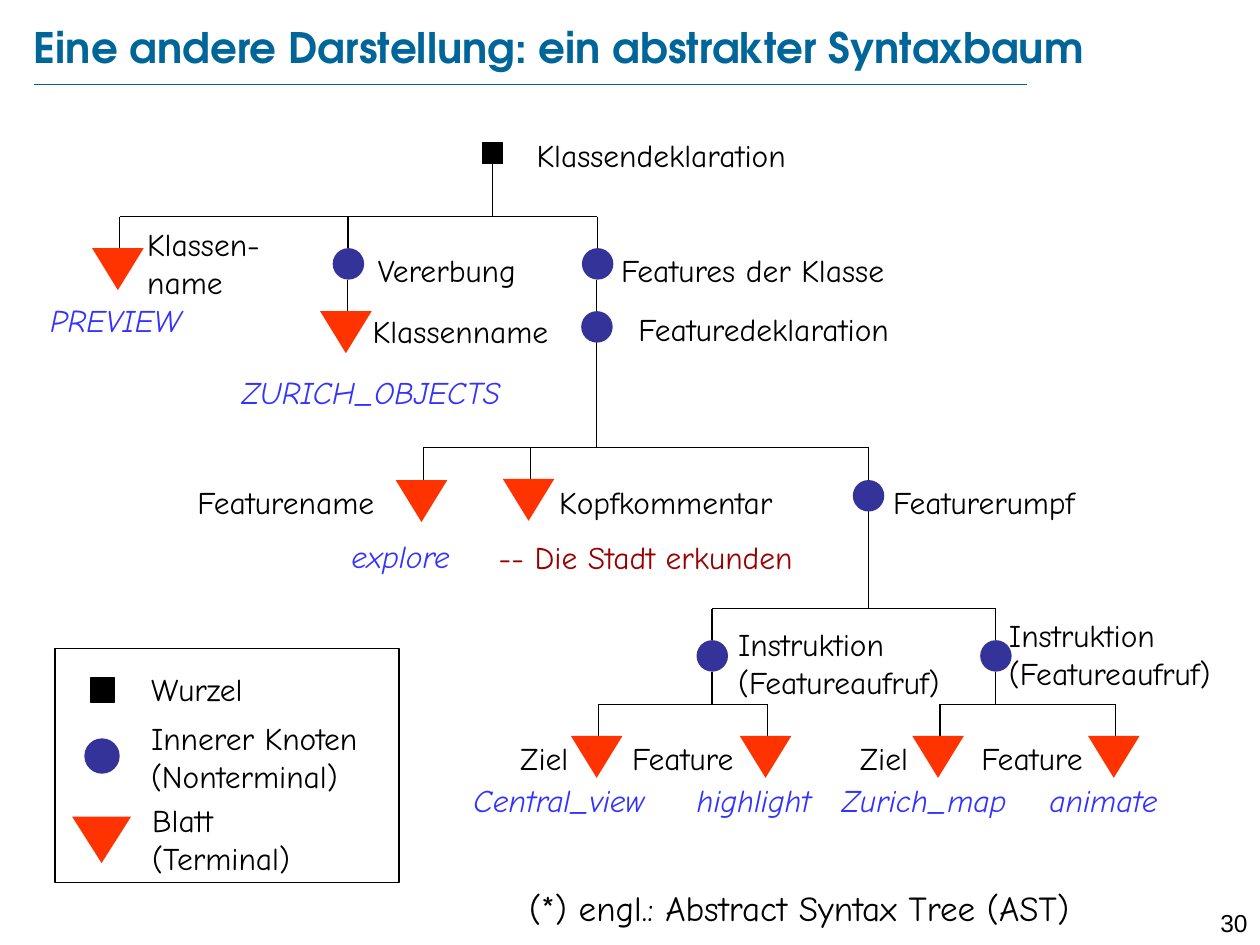
from lxml import etree
from pptx import Presentation
from pptx.dml.color import RGBColor
from pptx.enum.shapes import MSO_CONNECTOR as Connector, MSO_SHAPE as Shape
from pptx.enum.text import MSO_ANCHOR as Anchor, PP_ALIGN as Align
from pptx.oxml.ns import qn
from pptx.util import Pt

COLORS = {"title": "006699", "black": "000000", "leaf": "FF3300",
          "inner": "333399", "value": "3333FF", "comment": "990000"}

prs = Presentation()
prs.slide_width, prs.slide_height = Pt(720), Pt(540)
slide = prs.slides.add_slide(prs.slide_layouts[6])


def color(name):
    return RGBColor.from_string(COLORS[name])


def add_text(content, left, top, width, height=29, *, size=18, font="Comic Neue",
             ink="black", bold=False, italic=False, align=Align.LEFT,
             anchor=Anchor.TOP, inset=(7.2, 3.6)):
    frame = slide.shapes.add_textbox(Pt(left), Pt(top), Pt(width), Pt(height)).text_frame
    frame.word_wrap = True
    frame.vertical_anchor = anchor
    frame.margin_left = frame.margin_right = Pt(inset[0])
    frame.margin_top = frame.margin_bottom = Pt(inset[1])
    frame.text = content
    for paragraph in frame.paragraphs:
        paragraph.alignment = align
        paragraph.font.size = Pt(size)
        paragraph.font.name = font
        paragraph.font.bold = bold
        paragraph.font.italic = italic
        paragraph.font.color.rgb = color(ink)


# Title and page number
add_text("Eine andere Darstellung: ein abstrakter Syntaxbaum", 19.4, 9.4, 626, 34.6,
         size=24, font="TeX Gyre Adventor", ink="title", bold=True,
         anchor=Anchor.MIDDLE, inset=(0, 0))
add_text("30", 680.4, 515.5, 39.6, 17.3, size=14, font="Arial", align=Align.RIGHT)

# Tree nodes: x of the stem, top of the node
STEM = 18
LEVELS = {"class": 123.8, "feature": 255.8, "body": 347.8, "call": 402.5}
inner_nodes = [(198.9, 141.8), (341.3, 141.8), (340.9, 177.8),
               (496.1, 274.3), (406.8, 365.8), (568.9, 365.8)]
leaves = [(68.4, 141.8), (198.7, 177.8), (241.9, 274.3), (303.1, 273.6)]
leaves += [(x, LEVELS["call"] + STEM) for x in (342, 438.5, 537.1, 637.5)]

# Branches: horizontal bars, drops onto them, and a stem above each node
bars = [(68.4, 341.3, "class"), (241.9, 496.5, "feature"), (406.8, 568.9, "body"),
        (342, 438.5, "call"), (537.1, 637.5, "call")]
drops = [(281.5, 93.6, "class"), (340.9, 195.5, "feature"), (496.1, 292.3, "body"),
         (406.8, 383.8, "call"), (568.9, 383.8, "call")]
lines = [(19.4, 48.2, 586.8, 48.2, "title", 0.25)]
lines += [(x1, LEVELS[level], x2, LEVELS[level], "black", 0.75) for x1, x2, level in bars]
lines += [(x, top, x, LEVELS[level], "black", 0.75) for x, top, level in drops]
lines += [(x, top - STEM, x, top, "black", 0.75) for x, top in inner_nodes + leaves]
for x1, y1, x2, y2, ink, weight in lines:
    branch = slide.shapes.add_connector(Connector.STRAIGHT, Pt(x1), Pt(y1), Pt(x2), Pt(y2))
    branch.line.color.rgb = color(ink)
    branch.line.width = Pt(weight)
    etree.SubElement(branch._element.spPr, qn("a:effectLst"))

# Node symbols of the tree and of the legend, with the legend frame
symbols = [(Shape.FLOWCHART_CONNECTOR, x - 8.8, top, 18, 18, "inner", None)
           for x, top in inner_nodes]
symbols += [(Shape.FLOWCHART_MERGE, x - 15.8, top, 29.5, 24, "leaf", None)
            for x, top in leaves]
symbols += [
    (Shape.FLOWCHART_PROCESS, 275.8, 81.4, 11.5, 12.2, "black", "black"),
    (Shape.RECTANGLE, 31.4, 370.4, 196.6, 133.7, None, "black"),
    (Shape.FLOWCHART_PROCESS, 51.8, 387.4, 13.7, 13.7, "black", "black"),
    (Shape.FLOWCHART_CONNECTOR, 48.2, 421.9, 20.2, 20.2, "inner", None),
    (Shape.FLOWCHART_MERGE, 41.2, 466.6, 33.8, 26.6, "leaf", None),
]
for kind, left, top, width, height, fill, outline in symbols:
    symbol = slide.shapes.add_shape(kind, Pt(left), Pt(top), Pt(width), Pt(height))
    symbol.shadow.inherit = False
    if fill:
        symbol.fill.solid()
        symbol.fill.fore_color.rgb = color(fill)
    else:
        symbol.fill.background()
    if outline:
        symbol.line.color.rgb = color(outline)
        symbol.line.width = Pt(0.75)
    else:
        symbol.line.fill.background()

# Names of the constructs and of the legend entries
constructs = [
    ("Klassendeklaration", 299.5, 74.2, 173),
    ("Klassen-name", 77, 125.3, 106),
    ("Vererbung", 208.8, 139.7, 110),
    ("Features der Klasse", 347.8, 139.7, 190),
    ("Klassenname", 205.9, 175, 124),
    ("Featuredeklaration", 357.8, 173.5, 177),
    ("Featurename", 105.8, 272.2, 125),
    ("Kopfkommentar", 312.5, 272.2, 160),
    ("Featurerumpf", 503.3, 272.2, 132),
    ("Instruktion\n(Featureaufruf)", 414.7, 353.5, 156),
    ("Instruktion\n(Featureaufruf)", 569.5, 348.5, 150),
    ("Ziel", 290.2, 419, 50),
    ("Feature", 354.2, 419, 85),
    ("Ziel", 484.3, 419, 50),
    ("Feature", 553.7, 419, 85),
    ("Wurzel", 79.2, 379.4, 87),
    ("Innerer Knoten\n(Nonterminal)", 79.2, 407.5, 145),
    ("Blatt\n(Terminal)", 79.9, 454.3, 117),
]
for content, left, top, width in constructs:
    add_text(content, left, top, width)

# Values of the leaves
values = [
    ("PREVIEW", 21.6, 168.5, 99),
    ("ZURICH_OBJECTS", 131, 209.5, 184),
    ("explore", 193.7, 303.1, 79),
    ("Central_view", 263.5, 442.8, 125),
    ("highlight", 391, 442.8, 90),
    ("Zurich_map", 473.8, 442.8, 120),
    ("animate", 592.6, 442.8, 90),
]
for content, left, top, width in values:
    add_text(content, left, top, width, ink="value", italic=True)
add_text("-- Die Stadt erkunden", 277.9, 303.8, 202, ink="comment")

# Footnote
add_text("(*) engl.: Abstract Syntax Tree (AST)", 295.2, 503.3, 392, 32, size=20)

prs.save("out.pptx")
